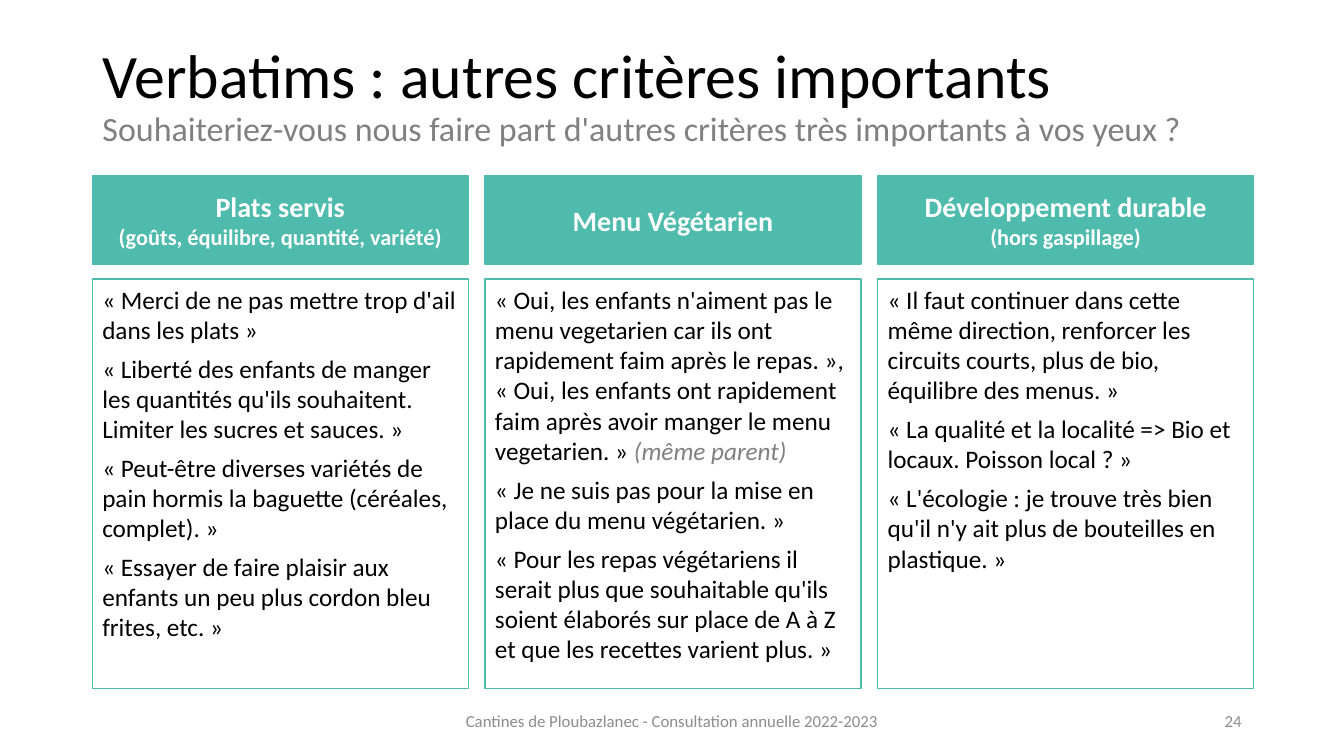
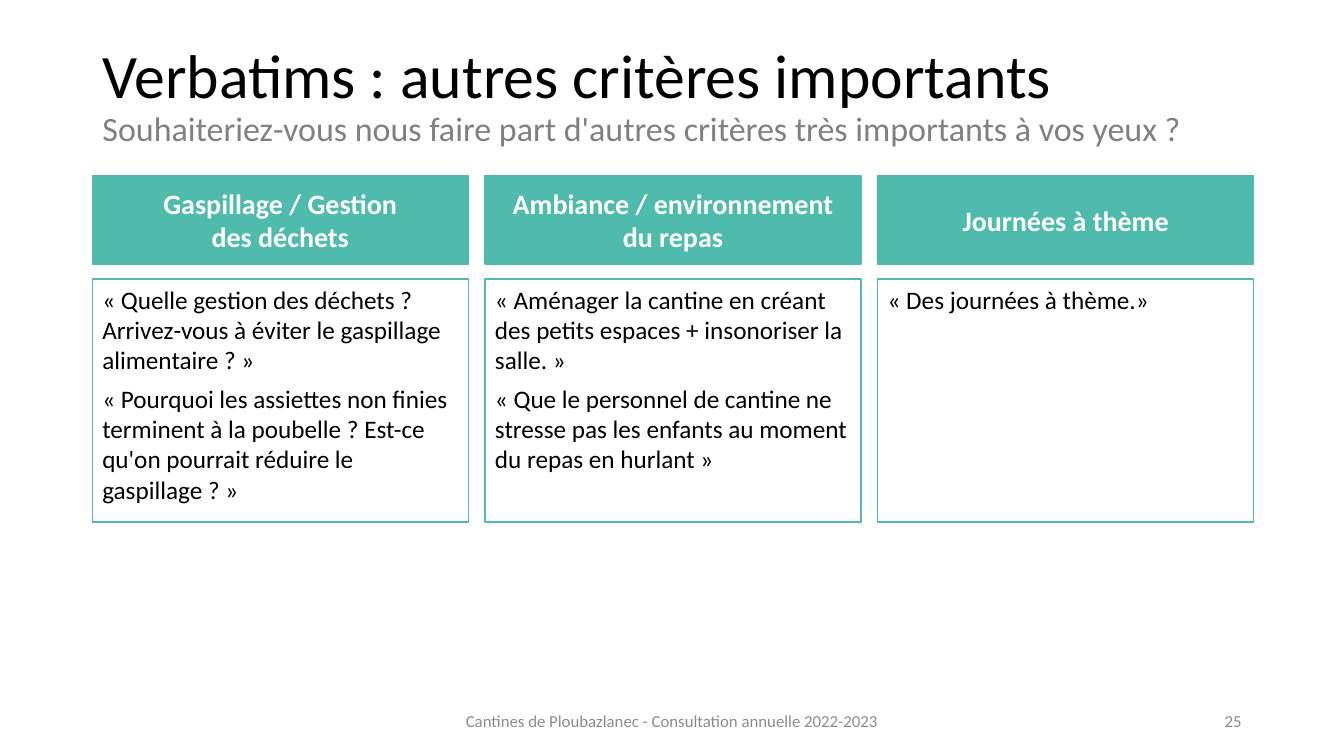
from dataclasses import dataclass

from pptx import Presentation
from pptx.dml.color import RGBColor
from pptx.enum.shapes import MSO_SHAPE
from pptx.enum.text import MSO_ANCHOR, MSO_AUTO_SIZE, PP_ALIGN
from pptx.util import Pt


@dataclass(frozen=True)
class Theme:
    font: str = "Calibri"
    accent: RGBColor = RGBColor(0x4E, 0xBB, 0xAD)
    ink: RGBColor = RGBColor(0, 0, 0)
    muted: RGBColor = RGBColor(0x80, 0x80, 0x80)
    footer: RGBColor = RGBColor(0x8C, 0x8C, 0x8C)
    reverse: RGBColor = RGBColor(0xFF, 0xFF, 0xFF)
    title_size: float = 44.1
    question_size: float = 24.3
    heading_size: float = 20
    detail_size: float = 16
    quote_size: float = 18
    footer_size: float = 12


LEFT, COLUMN_WIDTH, GAP = 66, 268.5, 12
HEADING_TOP, HEADING_HEIGHT = 125.3, 63.4
QUOTES_TOP = 199.4
FOOTER_TOP, FOOTER_HEIGHT = 500.4, 28.8

TITLE = "Verbatims : autres critères importants"
QUESTION = "Souhaiteriez-vous nous faire part d'autres critères très importants à vos yeux ?"
FOOTER = "Cantines de Ploubazlanec - Consultation annuelle 2022-2023"


class Deck:
    def __init__(self, theme):
        self.theme = theme
        self.presentation = Presentation()
        self.presentation.slide_width = Pt(960)
        self.presentation.slide_height = Pt(540)
        self.slide = None

    def new_slide(self, page):
        title_only = self.presentation.slide_layouts[5]
        self.slide = self.presentation.slides.add_slide(title_only)
        self.title()
        self.footer(FOOTER, 318, 324, PP_ALIGN.CENTER)
        self.footer(str(page), 678, 216, PP_ALIGN.RIGHT)

    def run(self, paragraph, text, size, color, bold=False, italic=False):
        run = paragraph.add_run()
        run.text = text
        font = run.font
        font.name, font.size = self.theme.font, Pt(size)
        font.bold, font.italic = bold, italic
        font.color.rgb = color

    def paragraphs(self, frame, count, align, space_after=0):
        """Yield count formatted paragraphs, starting with the frame's own."""
        for index in range(count):
            paragraph = frame.add_paragraph() if index else frame.paragraphs[0]
            paragraph.alignment = align
            paragraph.space_after = Pt(space_after)
            yield paragraph

    def title(self):
        title = self.slide.shapes.title
        title.left, title.top = Pt(LEFT), Pt(28.8)
        title.width, title.height = Pt(847.4), Pt(104.4)
        frame = title.text_frame
        frame.word_wrap = True
        frame.auto_size = MSO_AUTO_SIZE.NONE
        frame.vertical_anchor = MSO_ANCHOR.TOP
        paragraph = frame.paragraphs[0]
        paragraph.alignment = PP_ALIGN.LEFT
        paragraph.line_spacing = 0.9
        self.run(paragraph, TITLE, self.theme.title_size, self.theme.ink)
        paragraph.add_line_break()
        self.run(paragraph, QUESTION, self.theme.question_size, self.theme.muted)

    def footer(self, text, left, width, align):
        box = self.slide.shapes.add_textbox(
            Pt(left), Pt(FOOTER_TOP), Pt(width), Pt(FOOTER_HEIGHT))
        frame = box.text_frame
        frame.word_wrap = True
        frame.vertical_anchor = MSO_ANCHOR.MIDDLE
        paragraph = frame.paragraphs[0]
        paragraph.alignment = align
        self.run(paragraph, text, self.theme.footer_size, self.theme.footer)

    def panel(self, left, top, height, anchor, filled):
        """Add an accent-outlined rectangle and return its text frame."""
        panel = self.slide.shapes.add_shape(
            MSO_SHAPE.RECTANGLE, Pt(left), Pt(top), Pt(COLUMN_WIDTH), Pt(height))
        panel.shadow.inherit = False
        if filled:
            panel.fill.solid()
            panel.fill.fore_color.rgb = self.theme.accent
        else:
            panel.fill.background()
        panel.line.color.rgb = self.theme.accent
        panel.line.width = Pt(1)
        panel.text_frame.word_wrap = True
        panel.text_frame.vertical_anchor = anchor
        return panel.text_frame

    def heading(self, left, lines):
        frame = self.panel(left, HEADING_TOP, HEADING_HEIGHT, MSO_ANCHOR.MIDDLE, True)
        rows = self.paragraphs(frame, len(lines), PP_ALIGN.CENTER)
        for paragraph, line in zip(rows, lines):
            is_detail = line.startswith("(")
            size = self.theme.detail_size if is_detail else self.theme.heading_size
            self.run(paragraph, line, size, self.theme.reverse, bold=True)

    def quotes(self, left, height, quotes):
        """Add a quote box; a quote may be a (quote, remark) pair."""
        frame = self.panel(left, QUOTES_TOP, height, MSO_ANCHOR.TOP, False)
        rows = self.paragraphs(frame, len(quotes), PP_ALIGN.LEFT, space_after=6)
        size = self.theme.quote_size
        for paragraph, quote in zip(rows, quotes):
            text, remark = quote if isinstance(quote, tuple) else (quote, None)
            self.run(paragraph, text, size, self.theme.ink)
            if remark:
                self.run(paragraph, remark, size, self.theme.muted, italic=True)

    def columns(self, topics, quotes_height):
        for index, (heading, quotes) in enumerate(topics):
            left = LEFT + index * (COLUMN_WIDTH + GAP)
            self.heading(left, heading)
            self.quotes(left, quotes_height, quotes)


FOOD_TOPICS = [
    (["Plats servis", "(goûts, équilibre, quantité, variété)"], [
        "« Merci de ne pas mettre trop d'ail dans les plats »",
        "« Liberté des enfants de manger les quantités qu'ils souhaitent. "
        "Limiter les sucres et sauces. »",
        "« Peut-être diverses variétés de pain hormis la baguette "
        "(céréales, complet). »",
        "« Essayer de faire plaisir aux enfants un peu plus cordon bleu "
        "frites, etc. »",
    ]),
    (["Menu Végétarien"], [
        ("« Oui, les enfants n'aiment pas le menu vegetarien car ils ont "
         "rapidement faim après le repas. », « Oui, les enfants ont rapidement "
         "faim après avoir manger le menu vegetarien. » ", "(même parent)"),
        "« Je ne suis pas pour la mise en place du menu végétarien. »",
        "« Pour les repas végétariens il serait plus que souhaitable qu'ils "
        "soient élaborés sur place de A à Z et que les recettes varient plus. »",
    ]),
    (["Développement durable", "(hors gaspillage)"], [
        "« Il faut continuer dans cette même direction, renforcer les circuits "
        "courts, plus de bio, équilibre des menus. »",
        "« La qualité et la localité => Bio et locaux. Poisson local ? »",
        "« L'écologie : je trouve très bien qu'il n'y ait plus de bouteilles "
        "en plastique. »",
    ]),
]

LIFE_TOPICS = [
    (["Gaspillage / Gestion", "des déchets"], [
        "« Quelle gestion des déchets ? Arrivez-vous à éviter le gaspillage "
        "alimentaire ? »",
        "« Pourquoi les assiettes non finies terminent à la poubelle ? "
        "Est-ce qu'on pourrait réduire le gaspillage ? »",
    ]),
    (["Ambiance / environnement du repas"], [
        "« Aménager la cantine en créant des petits espaces + insonoriser "
        "la salle. »",
        "« Que le personnel de cantine ne stresse pas les enfants au moment "
        "du repas en hurlant »",
    ]),
    (["Journées à thème"], ["« Des journées à thème.»"]),
]


def main():
    deck = Deck(Theme())
    for page, topics, quotes_height in [(24, FOOD_TOPICS, 292.3),
                                        (25, LIFE_TOPICS, 173.5)]:
        deck.new_slide(page)
        deck.columns(topics, quotes_height)
    deck.presentation.save("out.pptx")


if __name__ == "__main__":
    main()
